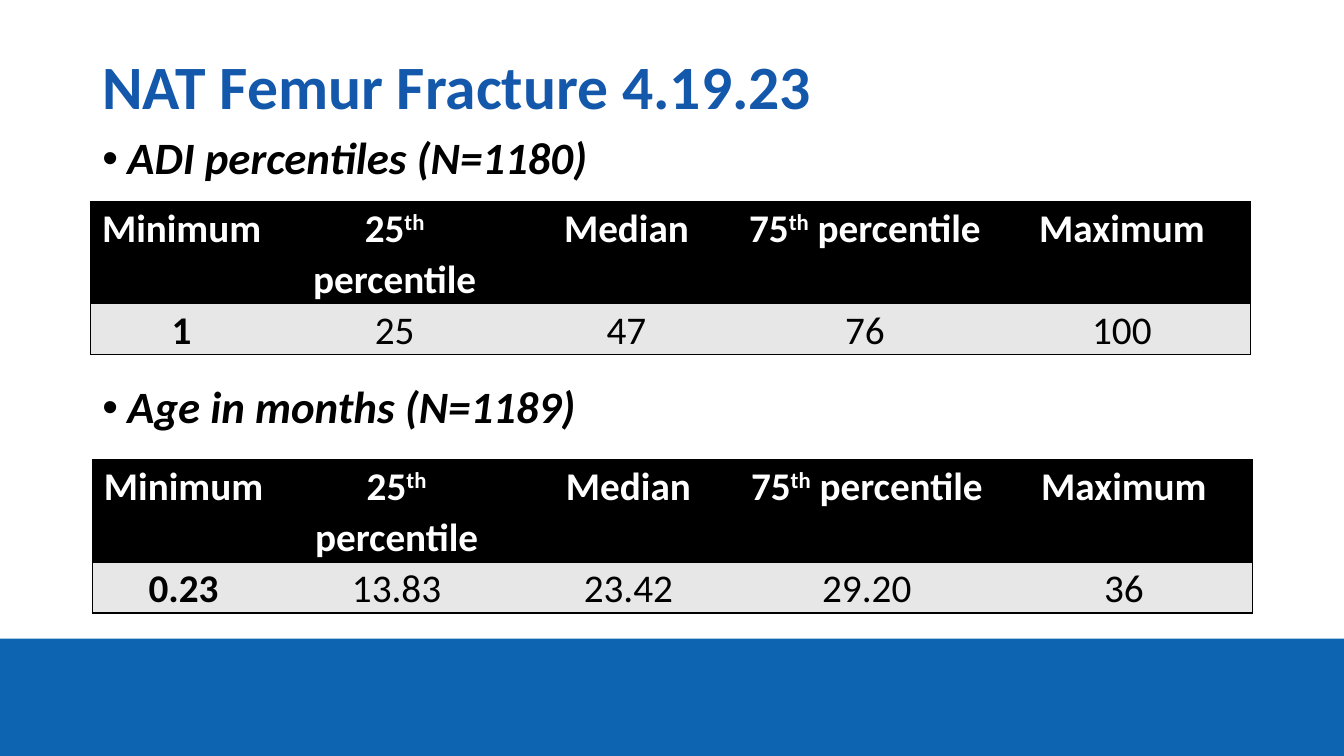
from lxml import etree
from pptx import Presentation
from pptx.dml.color import RGBColor
from pptx.enum.shapes import MSO_SHAPE
from pptx.enum.text import MSO_ANCHOR, PP_ALIGN
from pptx.oxml import parse_xml
from pptx.oxml.ns import qn
from pptx.util import Pt

RECTANGLE = MSO_SHAPE.RECTANGLE
MIDDLE = MSO_ANCHOR.MIDDLE
CENTER = PP_ALIGN.CENTER
DRAWING_NS = "http://schemas.openxmlformats.org/drawingml/2006/main"
NO_STYLE = "{2D5ABB26-0587-4C30-8999-92F81FD0307C}"


def color(hex_value):
    return RGBColor.from_string(hex_value)


def add_run(paragraph, text, size, hex_value, bold=True, italic=False):
    run = paragraph.add_run()
    run.text = text
    run.font.name = "Calibri"
    run.font.size = Pt(size)
    run.font.bold = bold
    run.font.italic = italic
    run.font.color.rgb = color(hex_value)
    return run


presentation = Presentation()
presentation.slide_width = Pt(960)
presentation.slide_height = Pt(540)
slide = presentation.slides.add_slide(presentation.slide_layouts[6])

# Bottom band and white content panel
for left, top, width, height, fill in (
    (0, 456.2, 960, 83.8, "0D64B1"),
    (37.4, 93.6, 882, 342, "FFFFFF"),
):
    shape = slide.shapes.add_shape(RECTANGLE, Pt(left), Pt(top), Pt(width), Pt(height))
    shape.shadow.inherit = False
    shape.fill.solid()
    shape.fill.fore_color.rgb = color(fill)
    shape.line.fill.background()

# Title
title = slide.shapes.add_textbox(Pt(66), Pt(11.5), Pt(828), Pt(104.4))
title.text_frame.word_wrap = True
title.text_frame.vertical_anchor = MIDDLE
paragraph = title.text_frame.paragraphs[0]
paragraph.line_spacing = 0.9
add_run(paragraph, "NAT Femur Fracture 4.19.23", 44, "1358AB")

# Percentile tables
headers = [("Minimum",), ("25", "th", " percentile"), ("Median",),
           ("75", "th", " percentile"), ("Maximum",)]
column_widths = [130.2, 174.2, 157, 183.6, 183.6]
tables = [
    (64.6, 144, ["1", "25", "47", "76", "100"]),
    (66, 328.4, ["0.23", "13.83", "23.42", "29.20", "36"]),
]
for left, top, values in tables:
    frame = slide.shapes.add_table(2, 5, Pt(left), Pt(top), Pt(sum(column_widths)), Pt(109.6))
    table = frame.table
    table.horz_banding = False
    table._tbl.tblPr.find(qn("a:tableStyleId")).text = NO_STYLE
    for column, width in zip(table.columns, column_widths):
        column.width = Pt(width)
    table.rows[0].height = Pt(73)
    table.rows[1].height = Pt(36.5)

    rows = [(headers, "000000", "FFFFFF"), ([(value,) for value in values], "E7E7E7", "000000")]
    for row_index, (texts, fill, font_color) in enumerate(rows):
        for column_index, parts in enumerate(texts):
            cell = table.cell(row_index, column_index)
            cell.margin_left = cell.margin_right = Pt(5.4)
            cell.margin_top = cell.margin_bottom = 0

            # Black outline, in the order left, right, top, bottom
            sides = ["lnT", "lnB"]
            if column_index == 0:
                sides.insert(0, "lnL")
            if column_index == 4:
                sides.insert(0, "lnR")
            for side in sides:
                border = etree.SubElement(cell._tc.get_or_add_tcPr(), qn("a:" + side), w=str(Pt(1)))
                border.append(parse_xml(
                    f'<a:solidFill xmlns:a="{DRAWING_NS}"><a:srgbClr val="000000"/></a:solidFill>'))
            cell.fill.solid()
            cell.fill.fore_color.rgb = color(fill)

            paragraph = cell.text_frame.paragraphs[0]
            paragraph.alignment = CENTER
            paragraph.line_spacing = 1.07
            bold = row_index == 0 or column_index == 0
            for part in parts:
                run = add_run(paragraph, part, 28, font_color, bold)
                if part == "th":
                    run.font._element.set("baseline", "30000")

# Bulleted table captions
captions = slide.shapes.add_textbox(Pt(66), Pt(93.6), Pt(828), Pt(319.7))
text_frame = captions.text_frame
text_frame.word_wrap = True
for index, text in enumerate(["ADI percentiles (N=1180)", "Age in months (N=1189)"]):
    paragraph = text_frame.add_paragraph() if index else text_frame.paragraphs[0]
    properties = paragraph._p.get_or_add_pPr()
    properties.set("marL", str(Pt(18)))
    properties.set("indent", str(Pt(-18)))
    etree.SubElement(properties, qn("a:buFont"), typeface="Arial")
    etree.SubElement(properties, qn("a:buChar"), char="•")
    paragraph.line_spacing = 0.9
    if index:
        paragraph.space_before = Pt(143.4)
    add_run(paragraph, text, 32, "000000", italic=True)

presentation.save("out.pptx")
